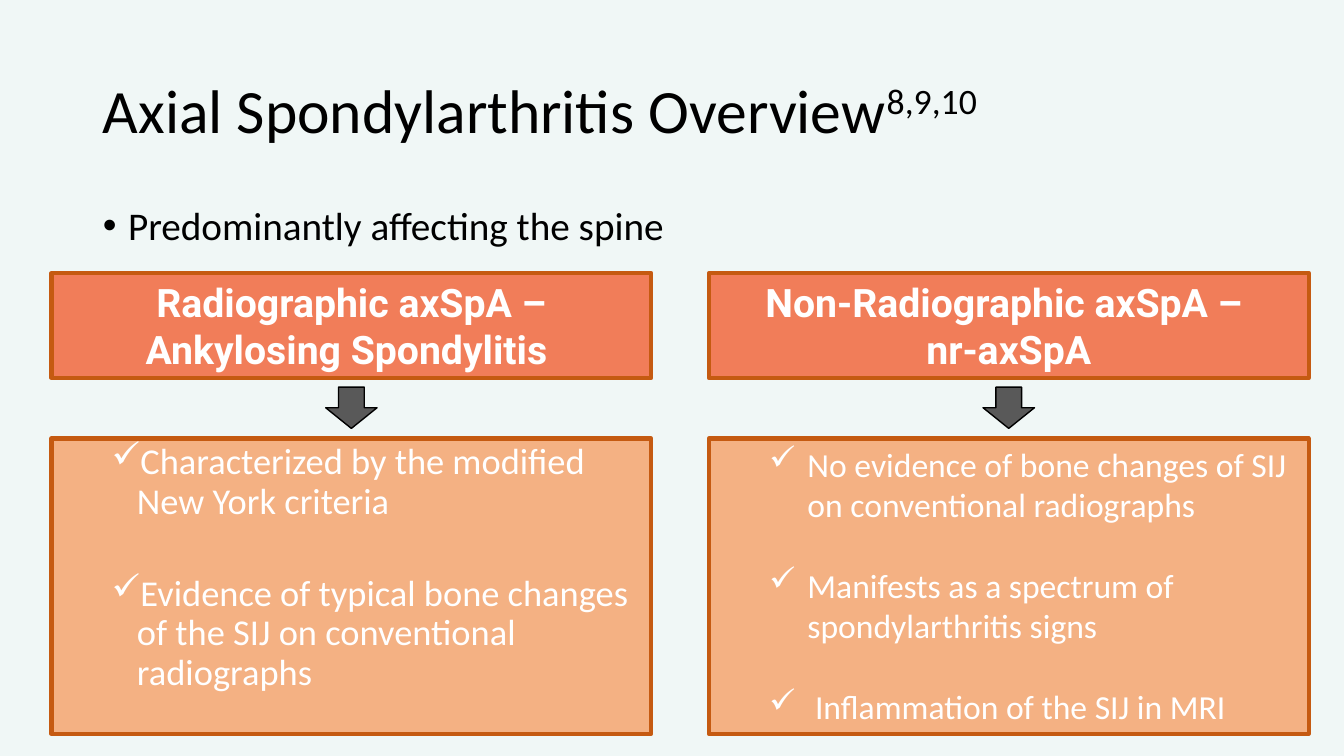
from lxml import etree
from pptx import Presentation
from pptx import util as u
from pptx.dml.color import RGBColor
from pptx.enum import shapes, text
from pptx.oxml.ns import qn

# Content
TITLE, REFS = "Axial Spondylarthritis Overview", "8,9,10"
LEAD = "Predominantly affecting the spine"
TYPES = [
    {"head": "Radiographic axSpA – Ankylosing Spondylitis ",
     "signs": ["Characterized by the modified New York criteria ",
               "Evidence of typical bone changes of the SIJ on conventional radiographs"],
     "size": 26, "indent": (0.75, 0.25), "line": 0.9, "gap": 38},
    {"head": "Non-Radiographic axSpA – \nnr-axSpA",
     "signs": ["No evidence of bone changes of SIJ on conventional radiographs",
               "Manifests as a spectrum of spondylarthritis signs ",
               " Inflammation of the SIJ in MRI"],
     "size": 24, "indent": (0.88, 0.38), "line": 1.0, "gap": 29},
]

# Colours
BACK = RGBColor(0xF0, 0xF7, 0xF6)
CORAL = RGBColor(0xF1, 0x7D, 0x59)
PEACH = RGBColor(0xF4, 0xB1, 0x83)
RUST = RGBColor(0xC5, 0x5A, 0x11)
GREY = RGBColor(0x59, 0x59, 0x59)
BLACK = RGBColor(0, 0, 0)
WHITE = RGBColor(255, 255, 255)

# Layout in inches
LEFT, STEP, WIDE = 0.51, 6.52, 5.95
HEAD_TOP, HEAD_HIGH = 2.71, 1.04
LIST_TOP, LIST_HIGH = 4.35, 2.93
TIP_TOP, TIP_WIDE, TIP_HIGH = 3.84, 0.51, 0.41


def place(item, x, y, w, h):
    item.left, item.top = u.Inches(x), u.Inches(y)
    item.width, item.height = u.Inches(w), u.Inches(h)


def style(para, size, color, face="Calibri", bold=False):
    for run in para.runs:
        font = run.font
        font.size, font.name, font.bold = u.Pt(size), face, bold
        font.color.rgb = color


def bullet(para, mark, left, hang):
    props = para._p.get_or_add_pPr()
    props.set("marL", str(u.Inches(left)))
    props.set("indent", str(-u.Inches(hang)))
    etree.SubElement(props, qn("a:buChar")).set("char", mark)


def block(kind, x, y, w, h, fill, line, weight):
    item = slide.shapes.add_shape(
        kind, u.Inches(x), u.Inches(y), u.Inches(w), u.Inches(h))
    item.shadow.inherit = False
    item.fill.solid()
    item.fill.fore_color.rgb = fill
    item.line.color.rgb = line
    item.line.width = u.Pt(weight)
    return item


show = Presentation()
show.slide_width, show.slide_height = u.Inches(13.33), u.Inches(7.5)
slide = show.slides.add_slide(show.slide_layouts[1])
slide.background.fill.solid()
slide.background.fill.fore_color.rgb = BACK

# Title with raised reference numbers
title, body = slide.placeholders
place(title, 0.92, 0.4, 11.5, 1.45)
frame = title.text_frame
frame.text = TITLE
frame.vertical_anchor = text.MSO_ANCHOR.MIDDLE
para = frame.paragraphs[0]
para.alignment = text.PP_ALIGN.LEFT
para.line_spacing = 0.9
refs = para.add_run()
refs.text = REFS
style(para, 44, BLACK)
refs.font._element.set("baseline", "30000")

# Lead bullet
place(body, 0.92, 2, 11.5, 0.64)
body.text_frame.text = LEAD
body.text_frame.auto_size = text.MSO_AUTO_SIZE.NONE
para = body.text_frame.paragraphs[0]
para.line_spacing = 0.9
para.space_before = u.Pt(10)
style(para, 28, BLACK)
bullet(para, "•", 0.25, 0.25)

# One column per type: heading, arrow, list
RECT = shapes.MSO_SHAPE.RECTANGLE
for col, kind in enumerate(TYPES):
    x = LEFT + col * STEP
    head = block(RECT, x, HEAD_TOP, WIDE, HEAD_HIGH, CORAL, RUST, 3)
    head.text_frame.word_wrap = True
    head.text_frame.text = kind["head"]
    for para in head.text_frame.paragraphs:
        para.alignment = text.PP_ALIGN.CENTER
        style(para, 28, WHITE, "Roboto", True)

    block(shapes.MSO_SHAPE.DOWN_ARROW, x + (WIDE - TIP_WIDE) / 2, TIP_TOP,
          TIP_WIDE, TIP_HIGH, GREY, BLACK, 1)

    panel = block(RECT, x, LIST_TOP, WIDE, LIST_HIGH, PEACH, RUST, 3)
    frame = panel.text_frame
    frame.word_wrap = True
    frame.vertical_anchor = text.MSO_ANCHOR.TOP
    frame.text = "\n".join(kind["signs"])
    for row, para in enumerate(frame.paragraphs):
        para.level = 1
        para.alignment = text.PP_ALIGN.LEFT
        para.line_spacing = kind["line"]
        para.space_before = u.Pt(kind["gap"] if row else 0)
        style(para, kind["size"], WHITE)
        bullet(para, "✓", *kind["indent"])

show.save("out.pptx")
